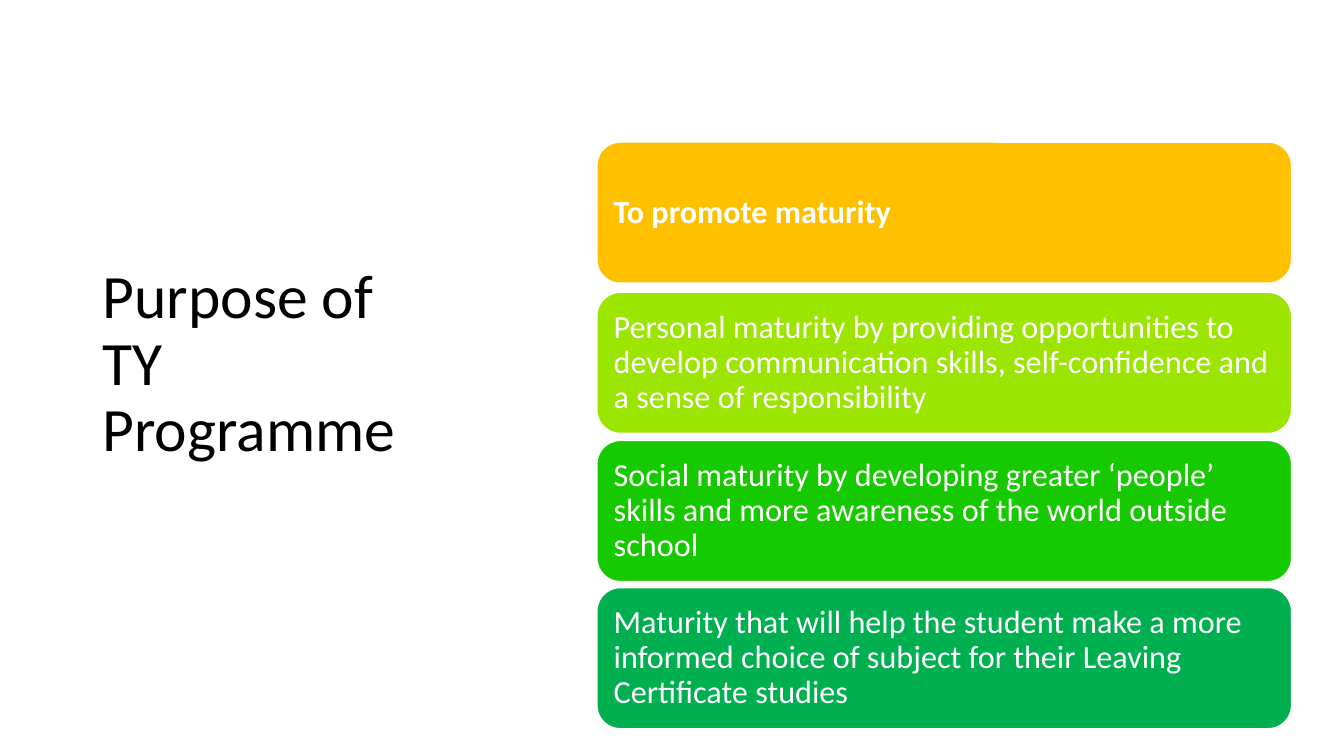
from pptx import Presentation
from pptx.dml.color import RGBColor
from pptx.enum.shapes import MSO_SHAPE
from pptx.enum.text import MSO_ANCHOR, PP_ALIGN
from pptx.util import Inches, Pt

ROUND = MSO_SHAPE.ROUNDED_RECTANGLE
MIDDLE = MSO_ANCHOR.MIDDLE
LEFT = PP_ALIGN.LEFT
FONT = "Calibri"
WHITE = "FFFFFF"

# Top, fill, text, bold
AIMS = [
    (1.41, "FFC000", "To promote maturity", True),
    (2.9, "9BE500", "Personal maturity by providing opportunities to develop "
     "communication skills, self-confidence and a sense of responsibility", False),
    (4.37, "17CA00", "Social maturity by developing greater ‘people’ skills "
     "and more awareness of the world outside school", False),
    (5.83, "00B050", "Maturity that will help the student make a more informed "
     "choice of subject for their Leaving Certificate studies", False),
]


def color(code):
    return RGBColor.from_string(code)


def write(shape, text, size, ink, bold=False, inset=0.1):
    frame = shape.text_frame
    frame.word_wrap = True
    frame.vertical_anchor = MIDDLE
    frame.margin_left = frame.margin_right = Inches(0.1)
    frame.margin_top = frame.margin_bottom = Inches(inset)
    para = frame.paragraphs[0]
    para.alignment = LEFT
    para.line_spacing = 0.9
    run = para.add_run()
    run.text = text
    run.font.name = FONT
    run.font.size = Pt(size)
    run.font.bold = bold
    run.font.color.rgb = color(ink)


def add_title(slide, left, top, width, height):
    box = slide.shapes.add_textbox(
        Inches(left), Inches(top), Inches(width), Inches(height))
    write(box, "Purpose of TY Programme", 44, "000000", inset=0.05)


def add_card(slide, left, top, width, height, fill, text, bold):
    card = slide.shapes.add_shape(
        ROUND, Inches(left), Inches(top), Inches(width), Inches(height))
    card.shadow.inherit = False
    card.fill.solid()
    card.fill.fore_color.rgb = color(fill)
    card.line.color.rgb = color(WHITE)
    card.line.width = Pt(1)
    write(card, text, 23, WHITE, bold)


def main():
    deck = Presentation()
    deck.slide_width = Inches(13.33)
    deck.slide_height = Inches(7.5)
    slide = deck.slides.add_slide(deck.slide_layouts[6])
    add_title(slide, 0.92, 1.31, 3.5, 4.63)
    for top, fill, text, bold in AIMS:
        add_card(slide, 5.92, top, 6.89, 1.4, fill, text, bold)
    deck.save("out.pptx")


if __name__ == "__main__":
    main()
